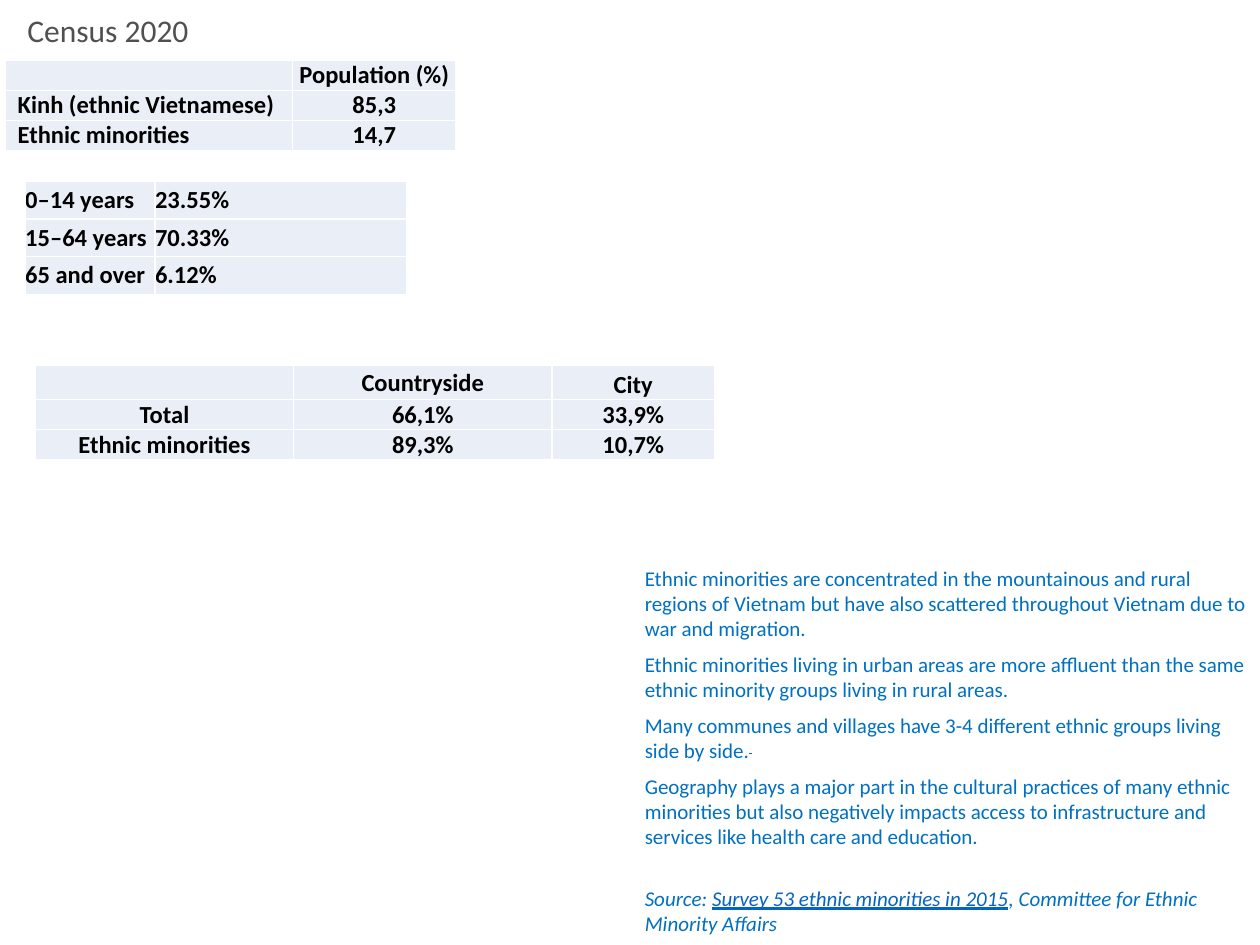
from lxml import etree
from pptx import Presentation
from pptx import util as u
from pptx.dml import color
from pptx.enum import text
from pptx.oxml import ns

FONT = "Calibri"
CELL_FILL = "EAEFF7"
BORDER = "FFFFFF"
BODY_BLUE = "0070C0"
LINK_BLUE = "0563C1"
LEFT, CENTER = text.PP_ALIGN.LEFT, text.PP_ALIGN.CENTER
MIDDLE, BOTTOM = text.MSO_ANCHOR.MIDDLE, text.MSO_ANCHOR.BOTTOM


def rgb(value):
    return color.RGBColor.from_string(value)


def apply(target, values):
    for name, value in values.items():
        setattr(target, name, value)


def add_run(paragraph, words, size, ink, **style):
    run = paragraph.add_run()
    run.text = words
    apply(run.font, {"name": FONT, "size": u.Pt(size), **style})
    run.font.color.rgb = rgb(ink)
    return run


def add_text_frame(slide, box):
    frame = slide.shapes.add_textbox(*map(u.Pt, box)).text_frame
    apply(frame, {"word_wrap": True,
                  "auto_size": text.MSO_AUTO_SIZE.SHAPE_TO_FIT_TEXT})
    return frame


def add_borders(cell):
    properties = cell._tc.get_or_add_tcPr()
    for side in ("lnL", "lnR", "lnT", "lnB"):
        line = etree.SubElement(properties, ns.qn(f"a:{side}"), w=str(u.Pt(1)))
        fill = etree.SubElement(line, ns.qn("a:solidFill"))
        etree.SubElement(fill, ns.qn("a:srgbClr"), val=BORDER)


def fill_cell(cell, words, alignment, anchor, margins):
    sides = ("margin_left", "margin_top", "margin_right", "margin_bottom")
    apply(cell, dict(zip(sides, map(u.Pt, margins))))
    cell.vertical_anchor = anchor
    add_borders(cell)
    cell.fill.solid()
    cell.fill.fore_color.rgb = rgb(CELL_FILL)
    paragraph = cell.text_frame.paragraphs[0]
    paragraph.alignment = alignment
    if words:
        add_run(paragraph, words, 14, "000000", bold=True)
    else:
        paragraph._p.get_or_add_endParaRPr().set("sz", "1400")


def add_data_table(slide, box, widths, heights, rows, cell_format):
    shape = slide.shapes.add_table(len(rows), len(widths), *map(u.Pt, box))
    table = shape.table
    apply(table, {"first_row": False, "horz_banding": False})
    for column, width in zip(table.columns, widths):
        column.width = u.Pt(width)
    for row, height in zip(table.rows, heights):
        row.height = u.Pt(height)
    for i, row in enumerate(rows):
        for j, words in enumerate(row):
            fill_cell(table.cell(i, j), words, *cell_format(i, j))


def population_format(row, column):
    if column == 0:
        return LEFT, MIDDLE, (7.2, 0, 0, 0)
    return CENTER, MIDDLE, (0, 0, 0, 0)


def age_format(row, column):
    return LEFT, MIDDLE, (0, 2.2, 0, 2.2)


def residence_format(row, column):
    anchor = BOTTOM if row == 0 or column == 2 else MIDDLE
    padding = 1.4 if (row, column) == (0, 1) else 0
    return CENTER, anchor, (0, padding, 0, padding)


def add_title(slide, box):
    frame = add_text_frame(slide, box)
    add_run(frame.paragraphs[0], "Census 2020", 18, "505050")


def add_commentary(slide, box):
    frame = add_text_frame(slide, box)
    statements = (
        "Ethnic minorities are concentrated in the mountainous and rural regions "
        "of Vietnam but have also scattered throughout Vietnam due to war and migration.",
        "Ethnic minorities living in urban areas are more affluent than the same "
        "ethnic minority groups living in rural areas.",
        "Many communes and villages have 3-4 different ethnic groups living side by side.",
        "Geography plays a major part in the cultural practices of many ethnic "
        "minorities but also negatively impacts access to infrastructure and "
        "services like health care and education.",
    )
    for index, statement in enumerate(statements):
        paragraph = frame.add_paragraph() if index else frame.paragraphs[0]
        paragraph.space_after = u.Pt(6)
        add_run(paragraph, statement, 12, BODY_BLUE)
        if index == 2:
            mark = add_run(paragraph, " ", 12, BODY_BLUE, underline=True)
            mark.font._element.set("baseline", "30000")
    source = frame.add_paragraph()
    source.space_before = u.Pt(14.6)
    for words, ink, underline in (
        ("Source: ", BODY_BLUE, False),
        ("Survey 53 ethnic minorities in 2015", LINK_BLUE, True),
        (", Committee for Ethnic Minority Affairs", BODY_BLUE, False),
    ):
        add_run(source, words, 12, ink, italic=True, underline=underline)


def build_census_slide(presentation):
    slide = presentation.slides.add_slide(presentation.slide_layouts[6])
    add_commentary(slide, (361.4, 319.7, 360, 220.3))
    add_data_table(
        slide, (2.9, 34.6, 257.8, 51.3), (164.2, 93.6), (17.1,) * 3,
        (("", "Population (%)"),
         ("Kinh (ethnic Vietnamese)", "85,3"),
         ("Ethnic minorities", "14,7")),
        population_format)
    add_title(slide, (8.6, 2.9, 686.2, 28.8))
    add_data_table(
        slide, (20.2, 208.8, 388.1, 54), (147.6, 147.6, 92.9), (19.6, 17.1, 17.1),
        (("", "Countryside", "City"),
         ("Total", "66,1%", "33,9%"),
         ("Ethnic minorities", "89,3%", "10,7%")),
        residence_format)
    add_data_table(
        slide, (14.4, 103.7, 218.2, 64.5), (74.2, 144), (21.5,) * 3,
        (("0–14 years", "23.55%"),
         ("15–64 years", "70.33%"),
         ("65 and over", "6.12%")),
        age_format)


def main():
    presentation = Presentation()
    apply(presentation, {"slide_width": u.Pt(720), "slide_height": u.Pt(540)})
    build_census_slide(presentation)
    presentation.save("out.pptx")


if __name__ == "__main__":
    main()
